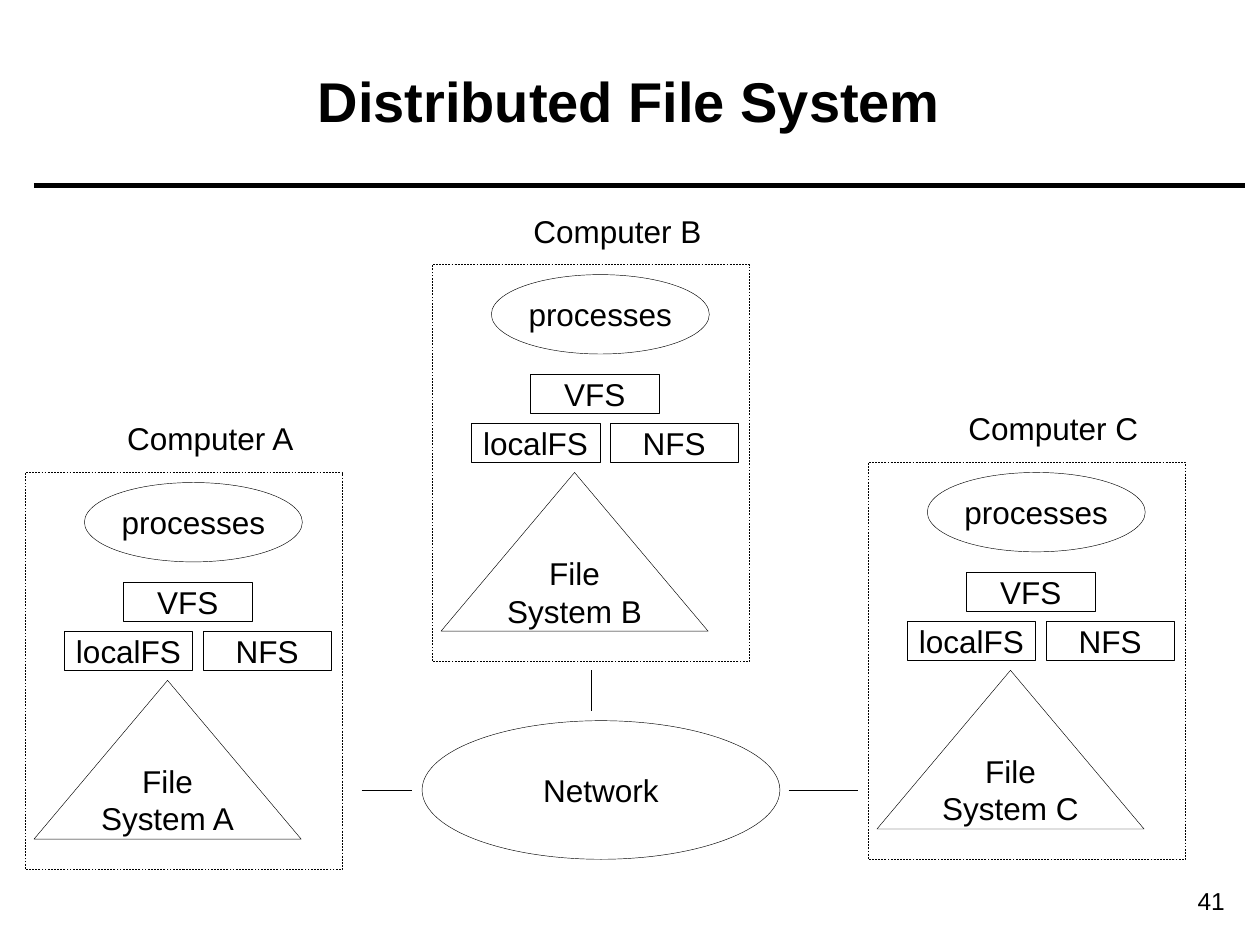
import pptx
import pptx.util
import pptx.dml.color
import pptx.enum.dml
import pptx.enum.shapes
import pptx.enum.text
import pptx.oxml.ns
import lxml.etree
from dataclasses import dataclass

Inches, Pt = pptx.util.Inches, pptx.util.Pt
SHAPE = pptx.enum.shapes.MSO_SHAPE
ALIGN = pptx.enum.text.PP_ALIGN
ANCHOR = pptx.enum.text.MSO_ANCHOR


@dataclass
class Theme:
    ink: pptx.dml.color.RGBColor
    font: str = "Arial"
    title: int = 32
    body: int = 18
    number: int = 14
    rule: float = 3
    hairline: float = 0.25


theme = Theme(ink=pptx.dml.color.RGBColor(0, 0, 0))

prs = pptx.Presentation()
prs.slide_width, prs.slide_height = Inches(10), Inches(7.5)
s = prs.slides.add_slide(prs.slide_layouts[5])


def write(sp, lines, size=theme.body, align=ALIGN.CENTER, anchor=ANCHOR.MIDDLE, bold=False, wrap=False):
    tf = sp.text_frame
    tf.word_wrap = wrap
    tf.vertical_anchor = anchor
    for i, line in enumerate(lines):
        p = tf.add_paragraph() if i else tf.paragraphs[0]
        p.alignment = align
        r = p.add_run()
        r.text = line
        r.font.name = theme.font
        r.font.size = Pt(size)
        r.font.bold = bold
        r.font.color.rgb = theme.ink


def add_outline(kind, x, y, w, h, lines=()):
    sp = s.shapes.add_shape(kind, Inches(x), Inches(y), Inches(w), Inches(h))
    sp.shadow.inherit = False
    sp.fill.background()
    sp.line.color.rgb = theme.ink
    sp.line.width = Pt(theme.hairline)
    write(sp, lines)
    return sp


title = s.shapes.title
title.left, title.top, title.width, title.height = Inches(0.35), Inches(0.17), Inches(9.29), Inches(1.25)
write(title, ["Distributed File System"], theme.title, bold=True, wrap=True)

number = s.shapes.add_textbox(Inches(8.78), Inches(6.98), Inches(1.04), Inches(0.34))
write(number, ["41"], theme.number, ALIGN.RIGHT, ANCHOR.TOP, wrap=True)

for name, x, y in [("A", 0.2, 3.75), ("B", 3.43, 2.1), ("C", 6.89, 3.67)]:
    frame = add_outline(SHAPE.RECTANGLE, x, y, 2.52, 3.15)
    frame.line.dash_style = pptx.enum.dml.MSO_LINE.DASH
    label = s.shapes.add_textbox(Inches(x + 0.62), Inches(y - 0.47), Inches(1.7), Inches(0.4))
    write(label, [f"Computer {name}"], anchor=ANCHOR.TOP)
    add_outline(SHAPE.OVAL, x + 0.47, y + 0.08, 1.73, 0.63, ["processes"])
    for text, dx, dy in [("VFS", 0.78, 0.87), ("localFS", 0.31, 1.26), ("NFS", 1.41, 1.26)]:
        add_outline(SHAPE.RECTANGLE, x + dx, y + dy, 1.02, 0.31, [text])
    add_outline(SHAPE.ISOSCELES_TRIANGLE, x + 0.07, y + 1.65, 2.12, 1.26, ["File", f"System {name}"])

add_outline(SHAPE.OVAL, 3.35, 5.72, 2.84, 1.1, ["Network"])

for x1, y1, x2, y2, width in [
    (0.27, 1.47, 9.88, 1.47, theme.rule),
    (2.87, 6.27, 3.27, 6.27, theme.hairline),
    (4.69, 5.32, 4.69, 5.64, theme.hairline),
    (6.26, 6.27, 6.81, 6.27, theme.hairline),
]:
    line = s.shapes.add_connector(
        pptx.enum.shapes.MSO_CONNECTOR.STRAIGHT, Inches(x1), Inches(y1), Inches(x2), Inches(y2)
    )
    line.line.color.rgb = theme.ink
    line.line.width = Pt(width)
    lxml.etree.SubElement(line._element.spPr, pptx.oxml.ns.qn("a:effectLst"))

prs.save("out.pptx")
